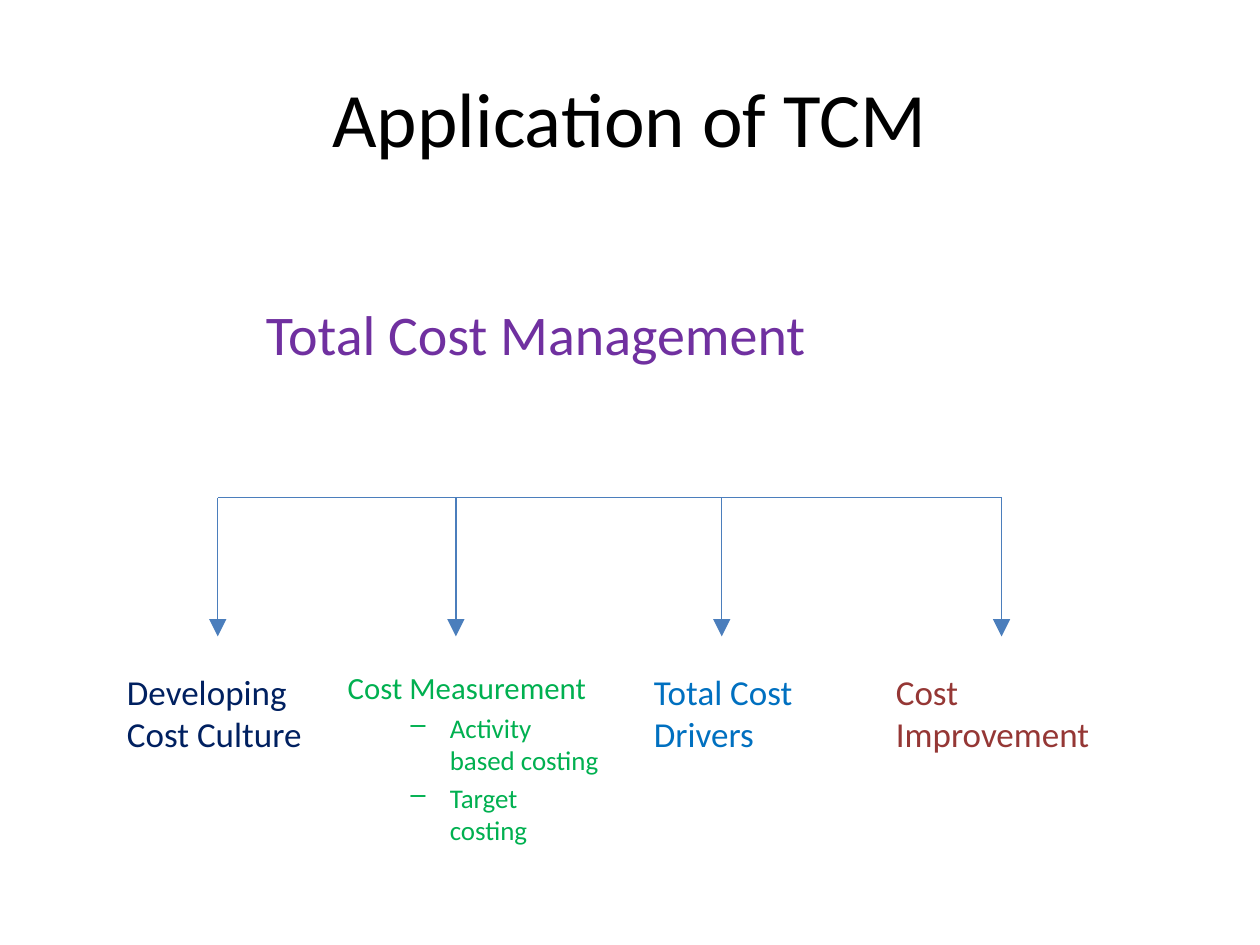
from lxml.etree import SubElement
from pptx import Presentation
from pptx.dml.color import RGBColor
from pptx.enum.shapes import MSO_CONNECTOR
from pptx.enum.text import MSO_ANCHOR, PP_ALIGN
from pptx.oxml.ns import qn
from pptx.util import Cm, Pt

COLORS = {"title": "000000", "heading": "7030A0", "line": "4B7EBC",
          "culture": "002060", "measurement": "00B050",
          "drivers": "0070C0", "improvement": "953735"}
FONT = "Calibri"

# Text boxes: colour, (left, top, width, height) in cm, [(text, size, bulleted)]
BOXES = [
    ("heading", (5.11, 5.92, 14.4, 4.39), [("Total Cost Management", 32, False)]),
    ("culture", (2.31, 13.39, 4.8, 1.68), [("Developing Cost Culture", 20, False)]),
    ("measurement", (6.76, 13.36, 5.59, 3.84), [
        ("Cost Measurement", 17.6, False),
        ("Activity based costing", 15.4, True),
        ("Target costing", 15.4, True)]),
    ("drivers", (12.93, 13.39, 4.52, 1.68), [("Total Cost Drivers", 20, False)]),
    ("improvement", (17.81, 13.39, 4.8, 1.68), [("Cost Improvement", 20, False)]),
]
# Branch lines, in cm
BRANCH_X = [4.39, 9.19, 14.55, 20.19]
BRANCH_TOP, BRANCH_BOTTOM = 10.03, 12.83


def set_font(p, size, color):
    p.font.name = FONT
    p.font.size = Pt(size)
    p.font.color.rgb = RGBColor.from_string(COLORS[color])


def add_bullet(p):
    pPr = p._p.get_or_add_pPr()
    pPr.set("lvl", "1")
    pPr.set("marL", str(Cm(2.06)))
    pPr.set("indent", str(-Cm(0.79)))
    bullet = pPr.makeelement(qn("a:buChar"), {"char": "–"})
    pPr.insert_element_before(bullet, "a:tabLst", "a:defRPr", "a:extLst")


def add_text(s, color, box, lines):
    tf = s.shapes.add_textbox(*map(Cm, box)).text_frame
    tf.word_wrap = True
    for i, (text, size, bulleted) in enumerate(lines):
        p = tf.paragraphs[0] if i == 0 else tf.add_paragraph()
        p.text = text
        p.space_before = Pt(size * 0.2)
        set_font(p, size, color)
        if bulleted:
            add_bullet(p)


def add_line(s, x1, y1, x2, y2, arrow=False):
    sp = s.shapes.add_connector(MSO_CONNECTOR.STRAIGHT, *map(Cm, (x1, y1, x2, y2)))
    sp.line.color.rgb = RGBColor.from_string(COLORS["line"])
    sp.line.width = Pt(0.75)
    if arrow:
        SubElement(sp.line._get_or_add_ln(), qn("a:tailEnd"),
                   type="triangle", w="lg", len="lg")
    SubElement(sp._element.spPr, qn("a:effectLst"))


def main():
    prs = Presentation()
    prs.slide_width, prs.slide_height = Cm(25.4), Cm(19.05)
    s = prs.slides.add_slide(prs.slide_layouts[5])

    # Title
    title = s.shapes.title
    title.left, title.top, title.width, title.height = map(Cm, (1.27, 0.76, 22.86, 3.18))
    tf = title.text_frame
    tf.text = "Application of TCM"
    tf.vertical_anchor = MSO_ANCHOR.MIDDLE
    tf.paragraphs[0].alignment = PP_ALIGN.CENTER
    set_font(tf.paragraphs[0], 44, "title")

    # Heading and branch labels
    for color, box, lines in BOXES:
        add_text(s, color, box, lines)

    # Crossbar with one arrow down to each branch
    add_line(s, BRANCH_X[0], BRANCH_TOP, BRANCH_X[-1], BRANCH_TOP)
    for x in BRANCH_X:
        add_line(s, x, BRANCH_TOP, x, BRANCH_BOTTOM, arrow=True)

    prs.save("out.pptx")


if __name__ == "__main__":
    main()
